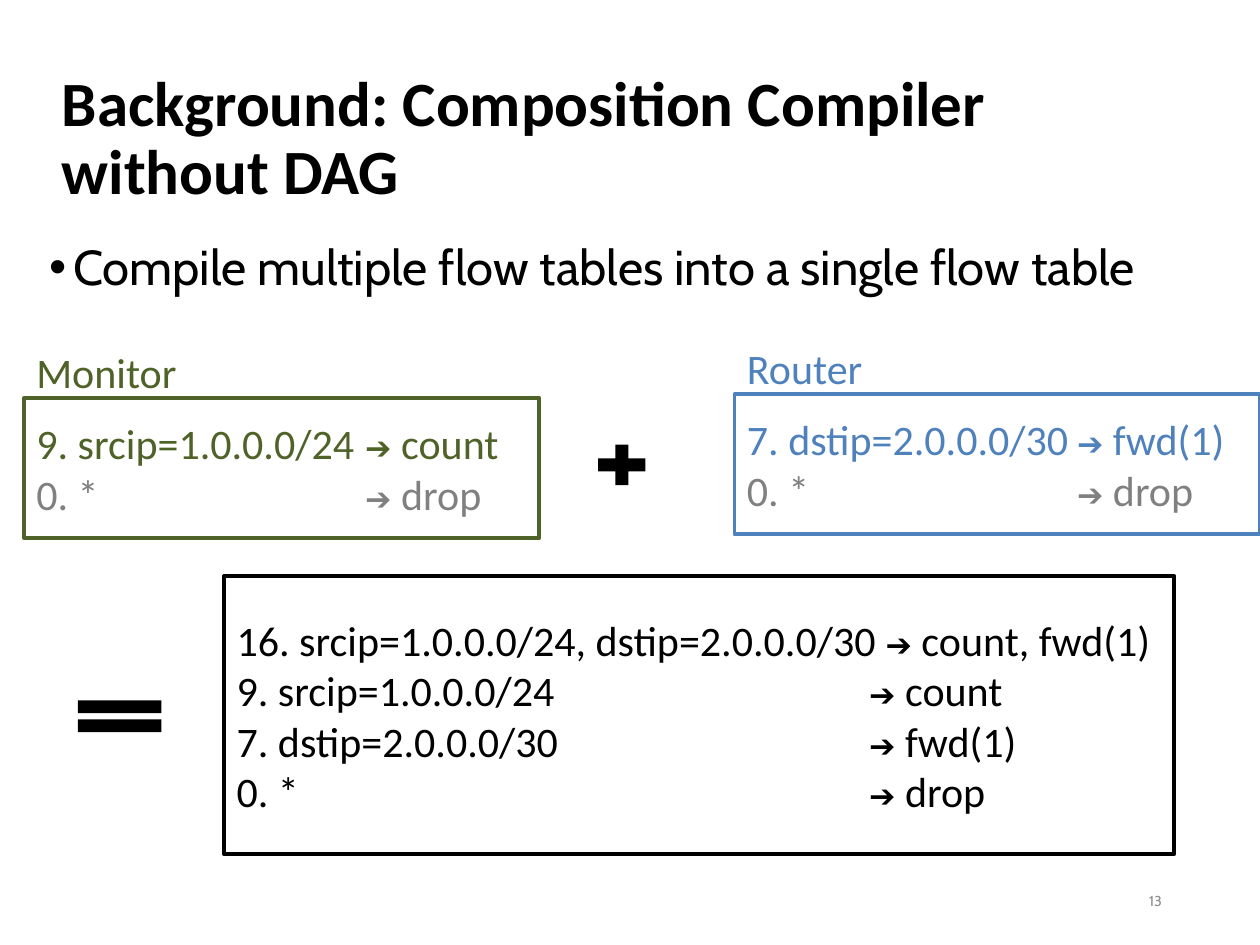
from dataclasses import dataclass
from lxml.etree import SubElement
from pptx import Presentation
from pptx.dml.color import RGBColor as Rgb
from pptx.enum.shapes import MSO_SHAPE as Kind
from pptx.enum.text import MSO_ANCHOR as Anchor, MSO_AUTO_SIZE as Fit, PP_ALIGN as Align
from pptx.oxml.ns import qn
from pptx.util import Inches, Pt

COLS, ROWS = 100, 75  # grid of the slide


@dataclass(frozen=True)
class Theme:
    ink: str = "000000"
    paper: str = "FFFFFF"
    green: str = "4F6228"
    blue: str = "4F81BD"
    gray: str = "808080"
    pale: str = "8C8C8C"
    main: str = "Calibri"
    body: str = "Cabin"
    sign: str = "Arial"
    head: float = 36
    lead: float = 28
    text: float = 24
    arrow: float = 18
    tiny: float = 8.2
    edge: float = 2.25


@dataclass(frozen=True)
class Cell:
    """Left, top, width and height in grid units."""
    x: float
    y: float
    w: float
    h: float


@dataclass(frozen=True)
class Rule:
    match: str
    act: str
    color: str
    gap: str = "\t"


@dataclass(frozen=True)
class Flow:
    cell: Cell
    color: str
    stop: float  # tab stop of the arrows, in inches
    rules: list[Rule]
    name: str = ""


T = Theme()
deck = Presentation()
deck.slide_width, deck.slide_height = Inches(10), Inches(7.5)
DX, DY = deck.slide_width / COLS, deck.slide_height / ROWS


def span(c: Cell) -> tuple[int, int, int, int]:
    return int(c.x * DX), int(c.y * DY), int(c.w * DX), int(c.h * DY)


def style(font, face: str, size: float, color: str, bold: bool = False) -> None:
    font.name, font.size, font.bold = face, Pt(size), bold
    font.color.rgb = Rgb.from_string(color)


def place(holder, cell: Cell, text: str):
    """Move a placeholder, fill it and return its paragraph."""
    holder.left, holder.top, holder.width, holder.height = span(cell)
    frame = holder.text_frame
    frame.text, frame.auto_size = text, Fit.NONE
    para = frame.paragraphs[0]
    para.alignment, para.line_spacing, para.space_before = Align.LEFT, 0.9, Pt(0)
    return para


def note(shapes, cell: Cell, text: str, face: str, size: float, color: str):
    """Add a one-line text box and return its frame."""
    frame = shapes.add_textbox(*span(cell)).text_frame
    frame.word_wrap, frame.text = True, text
    style(frame.paragraphs[0].font, face, size, color)
    return frame


def block(shapes, kind: Kind, cell: Cell, fill: str, line: str = ""):
    shape = shapes.add_shape(kind, *span(cell))
    shape.shadow.inherit = False
    shape.fill.solid()
    shape.fill.fore_color.rgb = Rgb.from_string(fill)
    if line:
        shape.line.color.rgb = Rgb.from_string(line)
        shape.line.width = Pt(T.edge)
    else:
        shape.line.fill.background()
    return shape


def write(para, rule: Rule, stop: float) -> None:
    """Write one rule, its arrow set at the tab stop."""
    para.alignment = Align.LEFT
    tabs = SubElement(para._p.get_or_add_pPr(), qn("a:tabLst"))
    SubElement(tabs, qn("a:tab"), pos=str(Inches(stop)), algn="l")
    for text, face, size in (
        (rule.match + rule.gap, T.main, T.text),
        ("➔", T.sign, T.arrow),
        (" " + rule.act, T.main, T.text),
    ):
        run = para.add_run()
        run.text = text
        style(run.font, face, size, rule.color)


def draw(shapes, flow: Flow) -> None:
    """Draw a flow table with its name above."""
    group = shapes.add_group_shape().shapes
    frame = block(group, Kind.RECTANGLE, flow.cell, T.paper, flow.color).text_frame
    frame.word_wrap, frame.vertical_anchor = True, Anchor.MIDDLE
    for i, rule in enumerate(flow.rules):
        para = frame.add_paragraph() if i else frame.paragraphs[0]
        write(para, rule, flow.stop)
    if flow.name:
        tag = Cell(flow.cell.x, flow.cell.y - 4.6, 20.1, 5)
        note(group, tag, flow.name, T.main, T.text, flow.color)


FLOWS = [
    Flow(Cell(1.9, 31.6, 40.9, 11.1), T.green, 2.61, [
        Rule("9. srcip=1.0.0.0/24", "count", T.green),
        Rule("0. *", "drop", T.gray),
    ], "Monitor"),
    Flow(Cell(58.3, 31.3, 41.7, 11.1), T.blue, 2.62, [
        Rule("7. dstip=2.0.0.0/30", "fwd(1)", T.blue),
        Rule("0. *", "drop", T.gray),
    ], "Router"),
    Flow(Cell(17.8, 45.7, 75.4, 22.1), T.ink, 5.02, [
        Rule("16. srcip=1.0.0.0/24, dstip=2.0.0.0/30", "count, fwd(1)", T.ink, " "),
        Rule("9. srcip=1.0.0.0/24", "count", T.ink),
        Rule("7. dstip=2.0.0.0/30", "fwd(1)", T.ink),
        Rule("0. *", "drop", T.ink),
    ]),
]
SIGNS = [
    (Kind.MATH_PLUS, Cell(46.8, 34.7, 5.1, 4.4)),
    (Kind.MATH_EQUAL, Cell(5, 54.7, 9, 4.3)),
]


def main() -> None:
    slide = deck.slides.add_slide(deck.slide_layouts[1])
    shapes = slide.shapes

    # Title and lead point
    para = place(shapes.title, Cell(3.9, 3.9, 86.2, 14.5),
                 "Background: Composition Compiler without DAG")
    shapes.title.text_frame.vertical_anchor = Anchor.MIDDLE
    style(para.font, T.main, T.head, T.ink, True)
    para = place(slide.placeholders[1], Cell(2.9, 18.8, 92.2, 48.6),
                 "Compile multiple flow tables into a single flow table")
    props = para._p.get_or_add_pPr()
    props.set("marL", str(Inches(0.19)))
    props.set("indent", str(-Inches(0.19)))
    SubElement(props, qn("a:buFont"), typeface=T.sign)
    SubElement(props, qn("a:buChar"), char="•")
    style(para.font, T.body, T.lead, T.ink)

    # Flow tables and the signs between them
    for flow in FLOWS:
        draw(shapes, flow)
    for kind, cell in SIGNS:
        block(shapes, kind, cell, T.ink)

    # Page number
    frame = note(shapes, Cell(70.7, 69.5, 22.5, 4), "13", T.body, T.tiny, T.pale)
    frame.vertical_anchor = Anchor.MIDDLE
    frame.paragraphs[0].alignment = Align.RIGHT

    deck.save("out.pptx")


if __name__ == "__main__":
    main()
